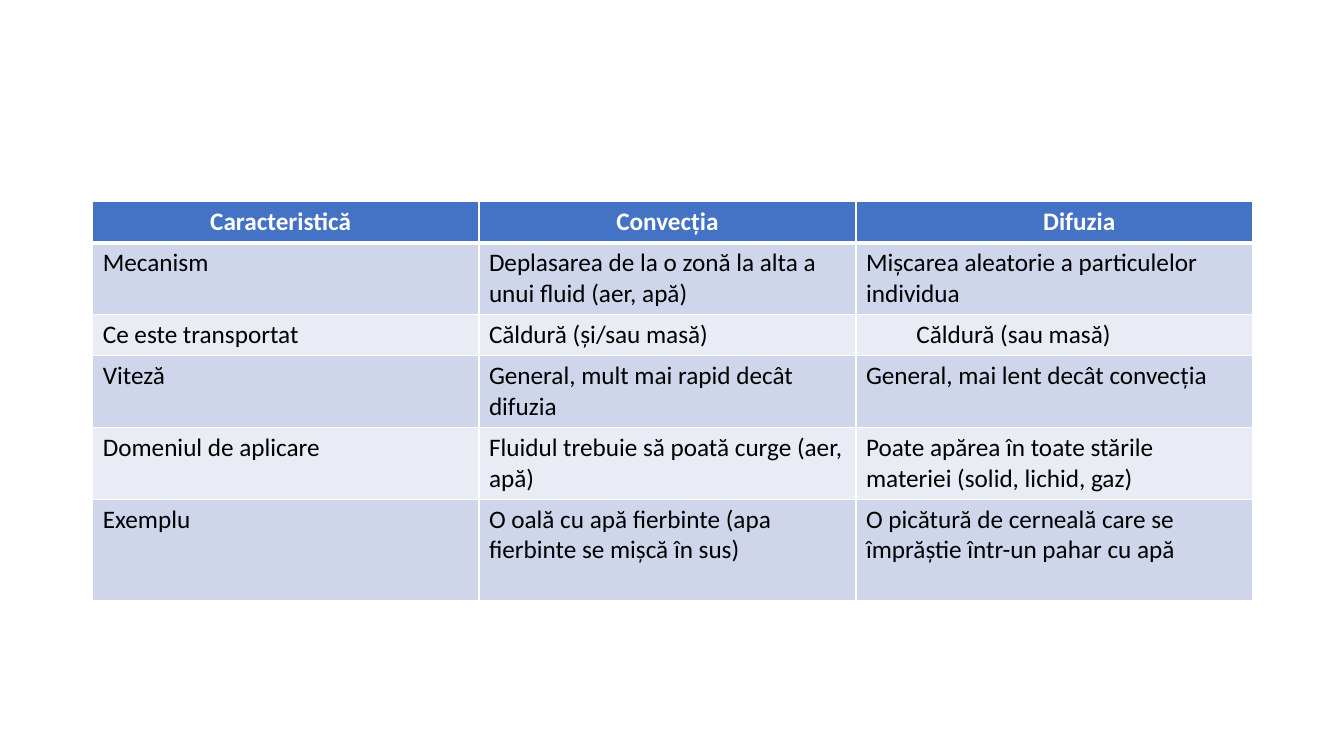
import pptx
import pptx.dml.color
import pptx.enum.text
import pptx.oxml
import pptx.oxml.ns
import pptx.util

COLORS = {"header": "4472C4", "odd": "CFD5EA", "even": "E9EBF5",
          "white": "FFFFFF", "black": "000000"}
WIDTH, HEIGHT = 13.33, 7.5
COLUMNS = [3.83, 3.74, 3.93]
ROW_HEIGHT, LINE_HEIGHT = 0.41, 0.3
ROW_LINES = [1, 2, 1, 2, 2, 3]
ROWS = [
    ["Caracteristică\t", "Convecția", "\tDifuzia"],
    ["Mecanism", "Deplasarea de la o zonă la alta a unui fluid (aer, apă)",
     "Mișcarea aleatorie a particulelor individua"],
    ["Ce este transportat", "Căldură (și/sau masă)", "\tCăldură (sau masă)"],
    ["Viteză", "General, mult mai rapid decât difuzia",
     "General, mai lent decât convecția"],
    ["Domeniul de aplicare", "Fluidul trebuie să poată curge (aer, apă)",
     "Poate apărea în toate stările materiei (solid, lichid, gaz)"],
    ["Exemplu", "O oală cu apă fierbinte (apa fierbinte se mișcă în sus)",
     "O picătură de cerneală care se împrăștie într-un pahar cu apă"],
]


def rgb(name):
    return pptx.dml.color.RGBColor.from_string(COLORS[name])


def write_text(tf, text, color="black", bold=False, align="LEFT", size=18):
    p = tf.paragraphs[0]
    p.alignment = pptx.enum.text.PP_ALIGN[align]
    r = p.add_run()
    r.text = text
    r.font.name = "Calibri"
    r.font.size = pptx.util.Pt(size)
    r.font.bold = bold
    r.font.color.rgb = rgb(color)


def set_borders(cell, **widths):
    tc_pr = cell._tc.get_or_add_tcPr()
    for side in "LRTB":
        width = pptx.util.Pt(widths.get(side, 1))
        tc_pr.append(pptx.oxml.parse_xml(
            f'<a:ln{side} {pptx.oxml.ns.nsdecls("a")} w="{width}">'
            f'<a:solidFill><a:srgbClr val="{COLORS["white"]}"/></a:solidFill>'
            f'</a:ln{side}>'))


def fill_cell(cell, row, text):
    header = row == 0
    set_borders(cell, T=3 if row == 1 else 1, B=3 if header else 1)
    cell.fill.solid()
    cell.fill.fore_color.rgb = rgb("header" if header else "odd" if row % 2 else "even")
    write_text(cell.text_frame, text, color="white" if header else "black",
               bold=header, align="CENTER" if header else "LEFT")


def comparison_table(s, left, top, width):
    heights = [ROW_HEIGHT + LINE_HEIGHT * (n - 1) for n in ROW_LINES]
    box = [pptx.util.Inches(v) for v in (left, top, width, sum(heights))]
    table = s.shapes.add_table(len(ROWS), len(COLUMNS), *box).table
    for column, share in zip(table.columns, COLUMNS):
        column.width = pptx.util.Inches(width * share / sum(COLUMNS))
    for i, (height, texts) in enumerate(zip(heights, ROWS)):
        table.rows[i].height = pptx.util.Inches(height)
        for j, text in enumerate(texts):
            fill_cell(table.cell(i, j), i, text)


def main():
    prs = pptx.Presentation()
    prs.slide_width = pptx.util.Inches(WIDTH)
    prs.slide_height = pptx.util.Inches(HEIGHT)
    s = prs.slides.add_slide(prs.slide_layouts[6])
    comparison_table(s, left=0.92, top=2, width=sum(COLUMNS))
    prs.save("out.pptx")


if __name__ == "__main__":
    main()
